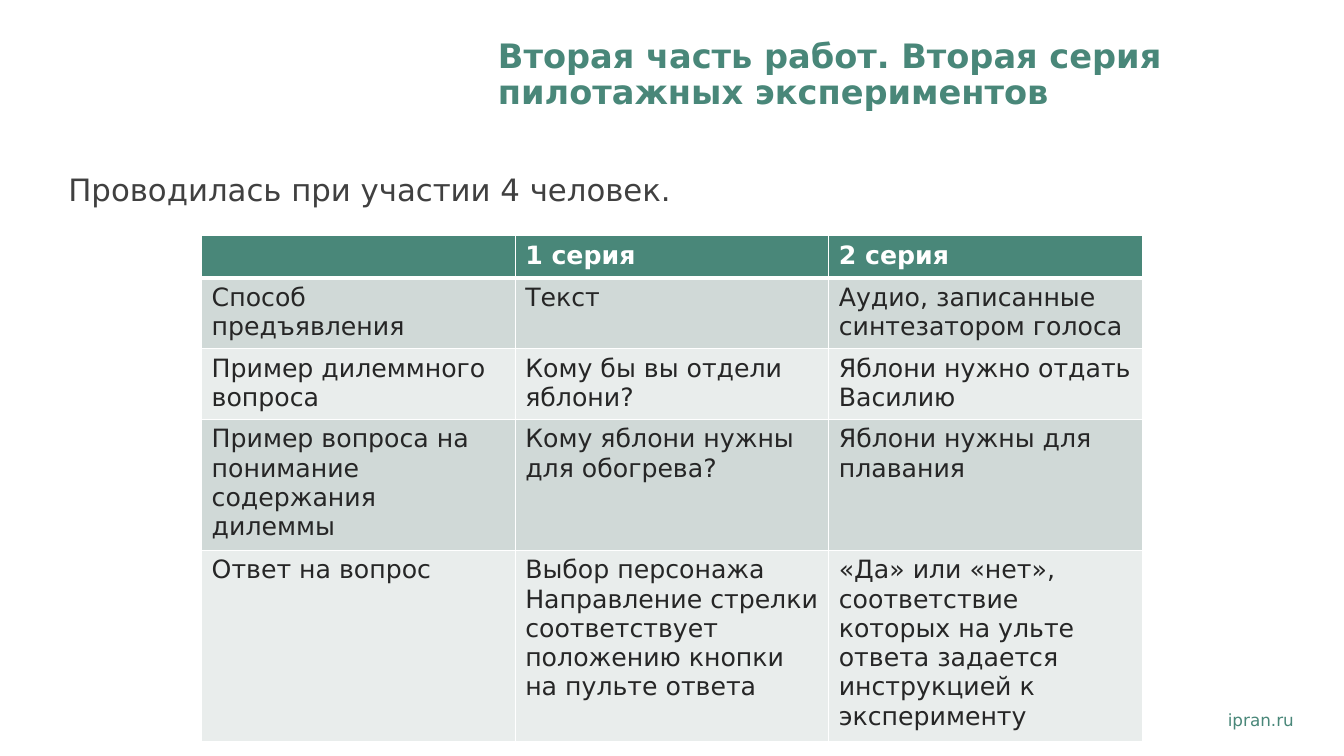
from lxml import etree
from pptx import Presentation
from pptx.dml.color import RGBColor as RGB
from pptx.oxml import parse_xml
from pptx.oxml.ns import nsdecls
from pptx.util import Inches, Pt

FACE = "DejaVu Sans"
GREEN = "498779"
BANDS = ["D0D9D7", "E9EDEC"]


def style(par, size, color, bold=False):
    font = par.font
    font.name, font.size, font.bold = FACE, Pt(size), bold
    font.color.rgb = RGB.from_string(color)


def edge(cell, widths):
    """Draw white borders, widths in points: left, right, top, bottom."""
    props = cell._tc.get_or_add_tcPr()
    for i, (side, width) in enumerate(zip("LRTB", widths)):
        props.insert(i, parse_xml(
            f'<a:ln{side} {nsdecls("a")} w="{Pt(width)}"><a:solidFill>'
            f'<a:srgbClr val="FFFFFF"/></a:solidFill></a:ln{side}>'))


deck = Presentation()
deck.slide_width, deck.slide_height = Inches(13.33), Inches(7.5)
slide = deck.slides.add_slide(deck.slide_layouts[6])

# Text boxes: place, text, size, colour, bold, line spacing
texts = [
    ((12.08, 6.99, 1.04, 0.3), "ipran.ru", 12, GREEN, False, 1.0),
    ((4.84, 0.34, 7.59, 0.56),
     "Вторая часть работ. Вторая серия пилотажных экспериментов",
     24, GREEN, True, 0.9),
    ((0.58, 1.28, 12.18, 1.58), "Проводилась при участии 4 человек.",
     22, "404040", False, 2.0),
]
for place, text, size, color, bold, gap in texts:
    frame = slide.shapes.add_textbox(*map(Inches, place)).text_frame
    frame.word_wrap = True
    par = frame.paragraphs[0]
    par.text, par.line_spacing = text, gap
    style(par, size, color, bold)

# Comparison of the two series
rows = [
    ["", "1 серия", "2 серия"],
    ["Способ предъявления", "Текст", "Аудио, записанные синтезатором голоса"],
    ["Пример дилеммного вопроса", "Кому бы вы отдели яблони?",
     "Яблони нужно отдать Василию"],
    ["Пример вопроса на понимание содержания дилеммы",
     "Кому яблони нужны для обогрева?", "Яблони нужны для плавания"],
    ["Ответ на вопрос",
     "Выбор персонажа\nНаправление стрелки соответствует положению кнопки "
     "на пульте ответа",
     "«Да» или «нет», соответствие которых на ульте ответа задается "
     "инструкцией к эксперименту"],
]
table = slide.shapes.add_table(
    len(rows), 3, Inches(2), Inches(2.34), Inches(9.33), Inches(2.1)).table
for r, row in enumerate(rows):
    head = r == 0
    for c, text in enumerate(row):
        cell = table.cell(r, c)
        cell.text = text
        cell.fill.solid()
        cell.fill.fore_color.rgb = RGB.from_string(
            GREEN if head else BANDS[(r - 1) % 2])
        edge(cell, (1, 1, 3 if r == 1 else 1, 3 if head else 1))
        for par in cell.text_frame.paragraphs:
            style(par, 18, "FFFFFF" if head else "262626", head)

deck.save("out.pptx")
